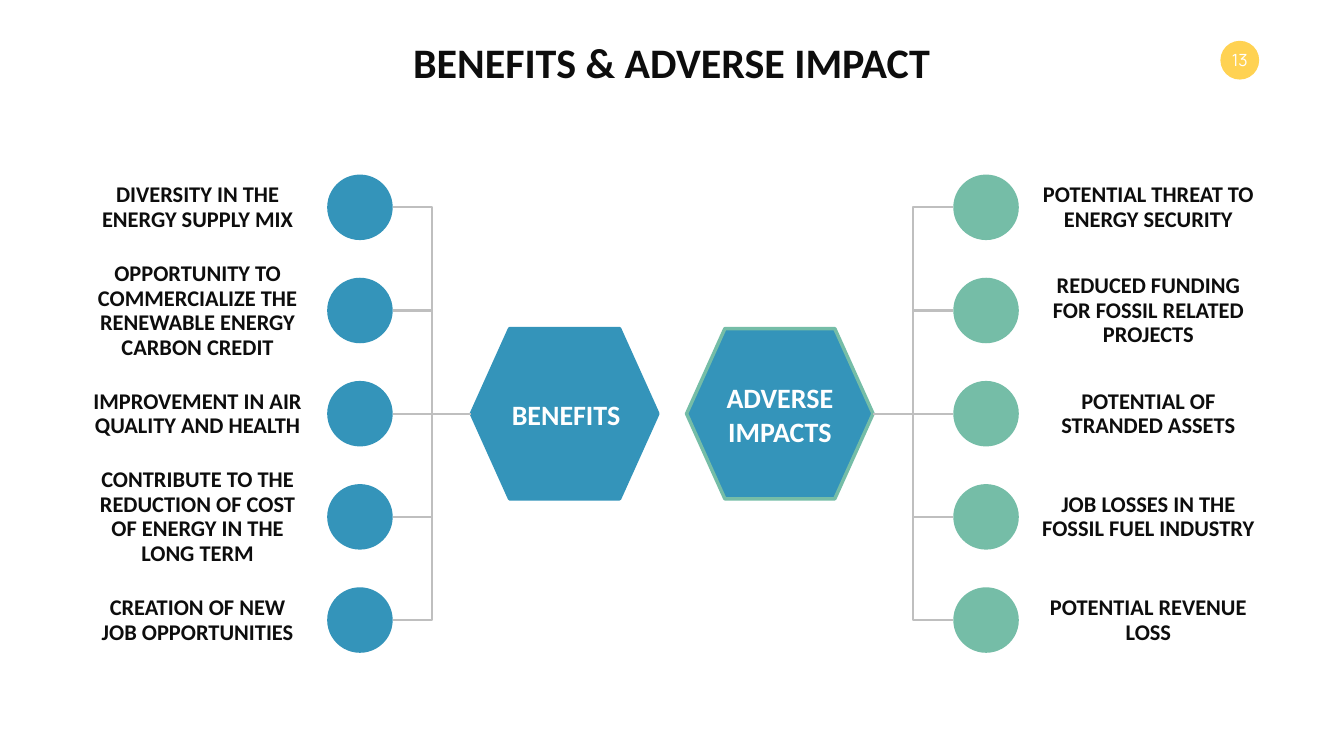
from pptx import Presentation
from pptx.dml.color import RGBColor
from pptx.enum.shapes import MSO_CONNECTOR, MSO_SHAPE
from pptx.enum.text import MSO_ANCHOR, MSO_AUTO_SIZE, PP_ALIGN
from pptx.oxml.ns import qn
from pptx.util import Pt
from lxml import etree

OVAL, HEXAGON = MSO_SHAPE.OVAL, MSO_SHAPE.HEXAGON
STRAIGHT, ELBOW = MSO_CONNECTOR.STRAIGHT, MSO_CONNECTOR.ELBOW
TOP, MIDDLE, BOTTOM = MSO_ANCHOR.TOP, MSO_ANCHOR.MIDDLE, MSO_ANCHOR.BOTTOM
CENTER = PP_ALIGN.CENTER
GROW = MSO_AUTO_SIZE.SHAPE_TO_FIT_TEXT

THEME = {
    "blue": RGBColor.from_string("3494BA"),
    "green": RGBColor.from_string("75BDA7"),
    "yellow": RGBColor.from_string("FFD252"),
    "gray": RGBColor.from_string("BFBFBF"),
    "ink": RGBColor.from_string("0D0D0D"),
    "white": RGBColor.from_string("FFFFFF"),
    "title": Pt(60), "hub": Pt(40), "item": Pt(32), "number": Pt(24),
    "font": "Calibri", "number_font": "Manrope",
}


def add_filled(slide, kind, box, fill, line=None):
    shape = slide.shapes.add_shape(kind, *[Pt(value) for value in box])
    shape.shadow.inherit = False
    shape.fill.solid()
    shape.fill.fore_color.rgb = THEME[fill]
    if line:
        shape.line.color.rgb = THEME[line]
        shape.line.width = Pt(5)
    else:
        shape.line.fill.background()
    return shape


def write_text(shape, lines, size, color, anchor=MIDDLE, wrap=False,
               font="font", bold=True, spacing=None):
    frame = shape.text_frame
    frame.text = "\n".join(lines)
    frame_format = {"word_wrap": wrap, "vertical_anchor": anchor, "auto_size": GROW}
    for name, value in frame_format.items():
        setattr(frame, name, value)
    for paragraph in frame.paragraphs:
        paragraph.alignment = CENTER
        paragraph.line_spacing = spacing
        font_format = {"name": THEME[font], "size": THEME[size], "bold": bold}
        for name, value in font_format.items():
            setattr(paragraph.font, name, value)
        paragraph.font.color.rgb = THEME[color]


presentation = Presentation()
presentation.slide_width, presentation.slide_height = Pt(1919.52), Pt(1080)
slide = presentation.slides.add_slide(presentation.slide_layouts[5])

# Title
title = slide.shapes.title
title_place = {"left": 562.3, "top": 48.2, "width": 794.2, "height": 80}
for name, value in title_place.items():
    setattr(title, name, Pt(value))
write_text(title, ["BENEFITS & ADVERSE IMPACT"], "title", "ink", TOP)

# Slide number
badge = add_filled(slide, OVAL, (1743, 58.3, 55.4, 55.4), "yellow")
write_text(badge, ["13"], "number", "white", font="number_font", bold=False)

# Two mirrored sides; each item gives its text and the lines its box holds
CENTER_Y, PITCH = 591, 147.4
CIRCLE, TEXT_WIDTH, LINE_HEIGHT, MARGINS = 93.6, 321.1, 35, 7.6
HUB_WIDTH, HUB_HEIGHT = 266.4, 243.4
sides = [
    {"hub": ["BENEFITS"], "hub_left": 673.2, "outline": "blue", "color": "blue",
     "label": (717.8, 181.4, 56), "circle_left": 467.3, "text_left": 121.7,
     "link": (467.3 + CIRCLE, 673.2), "hub_first": False,
     "items": [("DIVERSITY IN THE ENERGY SUPPLY MIX", 2),
               ("OPPORTUNITY TO COMMERCIALIZE THE RENEWABLE ENERGY CARBON CREDIT", 4),
               ("IMPROVEMENT IN AIR QUALITY AND HEALTH", 3),
               ("CONTRIBUTE TO THE REDUCTION OF COST OF ENERGY IN THE LONG TERM", 4),
               ("CREATION OF NEW JOB OPPORTUNITIES", 2)]},
    {"hub": ["ADVERSE", "IMPACTS"], "hub_left": 980.6, "outline": "green", "color": "green",
     "label": (1025.3, 177.1, 104.8), "circle_left": 1361.5, "text_left": 1479.6,
     "link": (980.6 + HUB_WIDTH, 1361.5), "hub_first": True,
     "items": [("POTENTIAL THREAT TO ENERGY SECURITY", 2),
               ("REDUCED FUNDING FOR FOSSIL RELATED PROJECTS", 3),
               ("POTENTIAL OF STRANDED ASSETS", 2),
               ("JOB LOSSES IN THE FOSSIL FUEL INDUSTRY", 3),
               ("POTENTIAL REVENUE LOSS", 2)]},
]

for side in sides:
    # Hexagon and its label
    hub = add_filled(slide, HEXAGON,
                     (side["hub_left"], CENTER_Y - HUB_HEIGHT / 2, HUB_WIDTH, HUB_HEIGHT),
                     "blue", side["outline"])
    hub.adjustments[0] = 0.225
    left, width, height = side["label"]
    label = slide.shapes.add_textbox(Pt(left), Pt(CENTER_Y - height / 2), Pt(width), Pt(height))
    write_text(label, side["hub"], "hub", "white", BOTTOM)

    for index, (text, line_count) in enumerate(side["items"]):
        item_y = CENTER_Y + (index - 2) * PITCH

        # Circle
        add_filled(slide, OVAL,
                   (side["circle_left"], item_y - CIRCLE / 2, CIRCLE, CIRCLE), side["color"])

        # Link between circle and hexagon
        start_x, end_x = side["link"]
        start_y, end_y = (CENTER_Y, item_y) if side["hub_first"] else (item_y, CENTER_Y)
        link = slide.shapes.add_connector(STRAIGHT if item_y == CENTER_Y else ELBOW,
                                          Pt(start_x), Pt(start_y), Pt(end_x), Pt(end_y))
        link.line.color.rgb = THEME["gray"]
        link.line.width = Pt(3)
        etree.SubElement(link._element.spPr, qn("a:effectLst"))

        # Item text
        height = line_count * LINE_HEIGHT + MARGINS
        text_box = slide.shapes.add_textbox(Pt(side["text_left"]), Pt(item_y - height / 2),
                                            Pt(TEXT_WIDTH), Pt(height))
        write_text(text_box, [text], "item", "ink", wrap=True, spacing=Pt(LINE_HEIGHT))

presentation.save("out.pptx")
